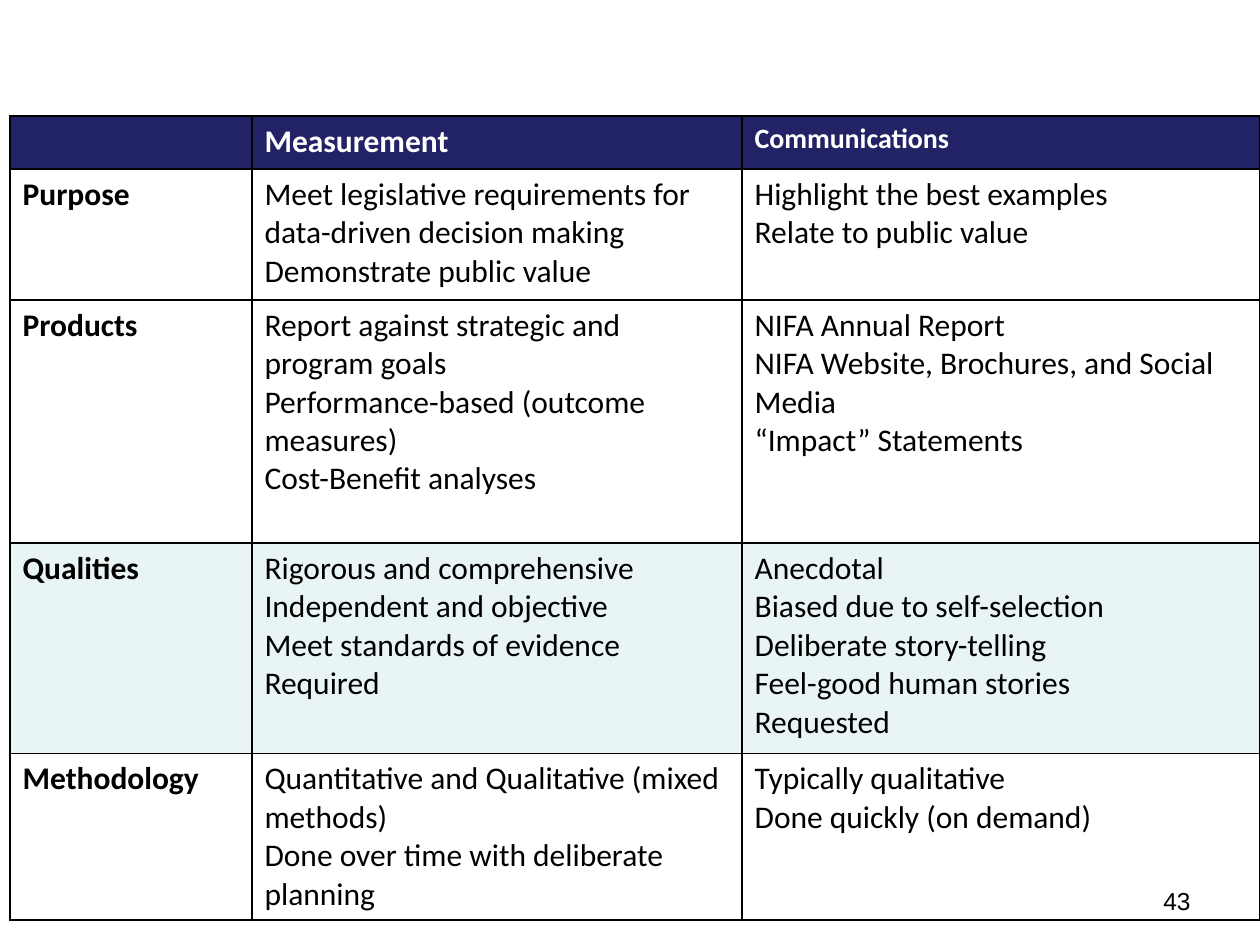
from typing import NamedTuple

from lxml.etree import SubElement
from pptx import Presentation
from pptx.dml.color import RGBColor
from pptx.enum.text import MSO_ANCHOR, PP_ALIGN
from pptx.oxml.ns import qn
from pptx.slide import Slide
from pptx.table import _Cell
from pptx.text.text import _Paragraph
from pptx.util import Inches, Pt

HUES = {"navy": "222267", "pale": "E9F4F5", "white": "FFFFFF", "black": "000000"}
WIDTHS = [1.92, 3.89, 4.11]


class Row(NamedTuple):
    height: float
    label: str
    measure: list[str]
    comms: list[str]
    fill: str = ""
    ink: str = "black"
    bold: bool = False
    last: int = 18


ROWS = [
    Row(0.42, "", ["Measurement"], ["Communications"], "navy", "white", True, 16),
    Row(1.04, "Purpose",
        ["Meet legislative requirements for data-driven decision making",
         "Demonstrate public value"],
        ["Highlight the best examples", "Relate to public value"]),
    Row(1.93, "Products",
        ["Report against strategic and program goals",
         "Performance-based (outcome measures)",
         "Cost-Benefit analyses"],
        ["NIFA Annual Report",
         "NIFA Website, Brochures, and Social Media",
         "“Impact” Statements"]),
    Row(1.67, "Qualities",
        ["Rigorous and comprehensive", "Independent and objective",
         "Meet standards of evidence", "Required"],
        ["Anecdotal", "Biased due to self-selection", "Deliberate story-telling",
         "Feel-good human stories", "Requested"], "pale"),
    Row(1.3, "Methodology",
        ["Quantitative and Qualitative (mixed methods)",
         "Done over time with deliberate planning"],
        ["Typically qualitative", "Done quickly (on demand)"]),
]


def style(para: _Paragraph, face: str, size: int, ink: str, bold: bool = False) -> None:
    font = para.font
    font.name, font.size, font.bold = face, Pt(size), bold
    font.color.rgb = RGBColor.from_string(HUES[ink])


def border(cell: _Cell) -> None:
    props = cell._tc.get_or_add_tcPr()
    for side in ("lnL", "lnR", "lnT", "lnB"):
        line = SubElement(props, qn(f"a:{side}"), w=str(Pt(1)))
        fill = SubElement(line, qn("a:solidFill"))
        SubElement(fill, qn("a:srgbClr"), val=HUES["black"])


def write(cell: _Cell, lines: list[str], row: Row, size: int, bold: bool) -> None:
    border(cell)
    if row.fill:
        cell.fill.solid()
        cell.fill.fore_color.rgb = RGBColor.from_string(HUES[row.fill])
    else:
        cell.fill.background()
    cell.text_frame.text = "\n".join(lines)
    for para in cell.text_frame.paragraphs:
        style(para, "Calibri", size, row.ink, bold)


def draw_table(slide: Slide) -> None:
    frame = slide.shapes.add_table(
        len(ROWS), len(WIDTHS), Inches(0.08), Inches(0.92),
        Inches(sum(WIDTHS)), Inches(sum(row.height for row in ROWS)))
    table = frame.table
    table.horz_banding = False
    for column, width in zip(table.columns, WIDTHS):
        column.width = Inches(width)
    for line, row in zip(table.rows, ROWS):
        line.height = Inches(row.height)
        label, measure, comms = line.cells
        write(label, [row.label], row, 18, True)
        write(measure, row.measure, row, 18, row.bold)
        write(comms, row.comms, row, row.last, row.bold)


def draw_number(slide: Slide) -> None:
    box = slide.shapes.add_textbox(Inches(9.06), Inches(7), Inches(0.44), Inches(0.3))
    frame = box.text_frame
    frame.word_wrap = True
    frame.vertical_anchor = MSO_ANCHOR.MIDDLE
    frame.margin_left = frame.margin_right = Inches(0.05)
    frame.margin_top = frame.margin_bottom = Inches(0.05)
    frame.text = "43"
    para = frame.paragraphs[0]
    para.alignment = PP_ALIGN.RIGHT
    style(para, "Arial", 14, "black")


def main() -> None:
    deck = Presentation()
    deck.slide_width, deck.slide_height = Inches(10), Inches(7.5)
    slide = deck.slides.add_slide(deck.slide_layouts[6])
    draw_table(slide)
    draw_number(slide)
    deck.save("out.pptx")


if __name__ == "__main__":
    main()
